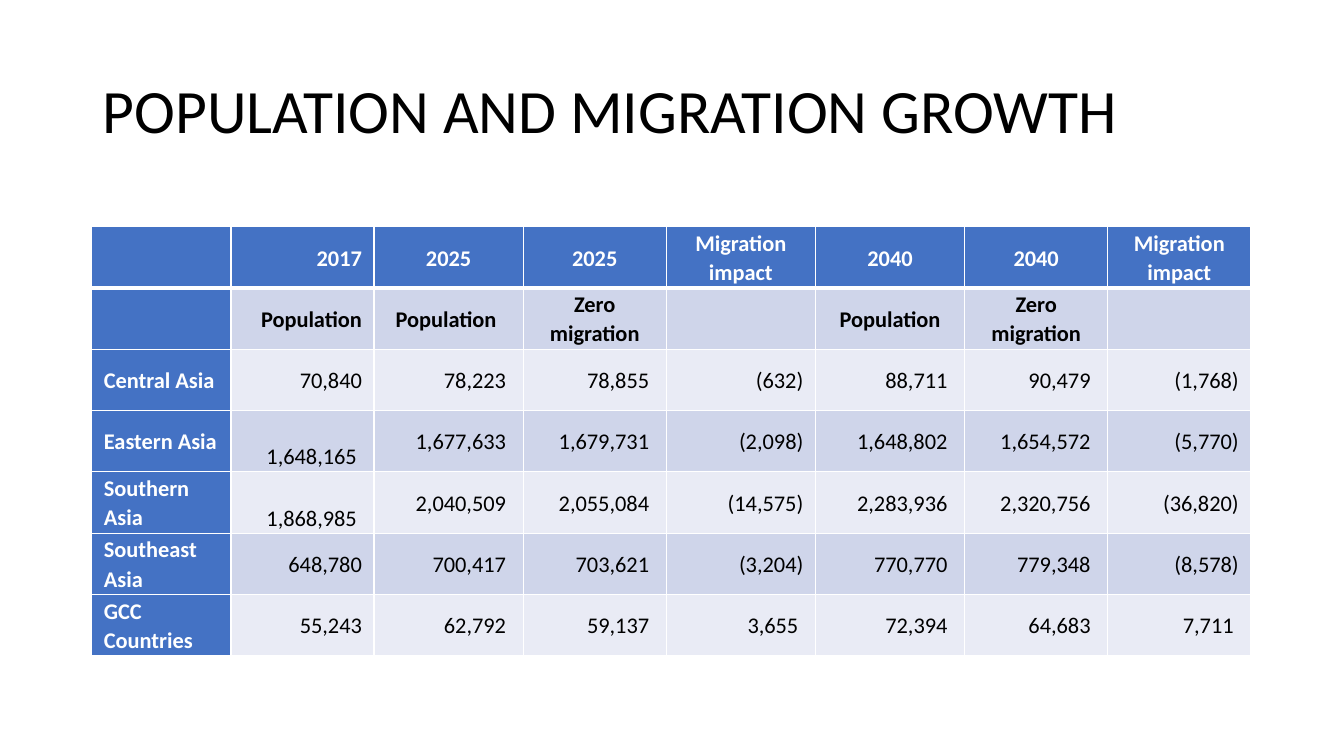
"""Build the population and migration growth slide."""
from dataclasses import dataclass
from typing import Any

from lxml import etree
from pptx import Presentation
from pptx import util as u
from pptx.dml.color import RGBColor
from pptx.enum import text as t
from pptx.oxml import ns

WIDE, HIGH = 13.33, 7.5


@dataclass(frozen=True)
class Theme:
    """Hold the colours, font and type sizes."""
    face: str = "Calibri"
    head: float = 44
    body: float = 16
    ink: str = "000000"
    white: str = "FFFFFF"
    blue: str = "4472C4"
    bands: tuple[str, str] = ("E9EBF5", "CFD5EA")
    thin: float = 1
    thick: float = 3


@dataclass(frozen=True)
class Box:
    """Place an area in percent of the slide."""
    left: float
    top: float
    width: float
    height: float


@dataclass(frozen=True)
class Cell:
    """Describe one table cell."""
    words: str
    fill: str
    ink: str
    bold: bool
    align: Any
    top: float = 0
    right: float = 0.12


LOOK = Theme()
TITLE = Box(6.9, 5.33, 86.25, 19.33)
GRID = Box(6.83, 30, 86.25, 56.77)
SLIM, BROAD = 10.65, 11.1
COLS = (10.35, SLIM, BROAD, SLIM, BROAD, BROAD, SLIM, SLIM)
PAD, SPACE, DROP = 0.12, 0.05, 0.3
ROWS = (
    ("", "2017", "2025", "2025", "Migration impact", "2040", "2040", "Migration impact"),
    ("", "Population", "Population", "Zero migration", "", "Population", "Zero migration", ""),
    ("Central Asia", "70,840", "78,223", "78,855", "(632)", "88,711", "90,479", "(1,768)"),
    ("Eastern Asia", "1,648,165", "1,677,633", "1,679,731", "(2,098)", "1,648,802", "1,654,572", "(5,770)"),
    ("Southern Asia", "1,868,985", "2,040,509", "2,055,084", "(14,575)", "2,283,936", "2,320,756", "(36,820)"),
    ("Southeast Asia", "648,780", "700,417", "703,621", "(3,204)", "770,770", "779,348", "(8,578)"),
    ("GCC Countries", "55,243", "62,792", "59,137", "3,655", "72,394", "64,683", "7,711"),
)


def across(share: float) -> int:
    """Turn a percent of the slide width into a length."""
    return u.Inches(WIDE * share / 100)


def down(share: float) -> int:
    """Turn a percent of the slide height into a length."""
    return u.Inches(HIGH * share / 100)


def place(box: Box) -> tuple[int, int, int, int]:
    """Return the box as slide lengths."""
    return across(box.left), down(box.top), across(box.width), down(box.height)


def apply(item: Any, form: dict[str, Any]) -> None:
    """Set each format value on the item."""
    for name, value in form.items():
        setattr(item, name, value)


def write(para: Any, words: str, size: float, ink: str, bold: bool = False) -> None:
    """Add one styled run to the paragraph."""
    run = para.add_run()
    run.text = words
    apply(run.font, {"name": LOOK.face, "size": u.Pt(size), "bold": bold})
    run.font.color.rgb = RGBColor.from_string(ink)


def plan(row: int, col: int, words: str) -> Cell:
    """Choose the format of a cell from its row and column."""
    side = col == 0
    blue = side or row == 0
    fill = LOOK.blue if blue else LOOK.bands[row % 2]
    ink = LOOK.white if blue else LOOK.ink
    align = t.PP_ALIGN.CENTER if row < 2 and col > 1 else t.PP_ALIGN.RIGHT
    if side:
        align = t.PP_ALIGN.LEFT
    low = col == 1 and row > 1 and len(words) > 7
    plain = row > 1 and col > 1 and not words.endswith(")")
    shift = low or plain or (row, col) == (1, 2)
    return Cell(words, fill, ink, blue or row < 2, align,
                DROP if low else 0, PAD + SPACE if shift else PAD)


def edge(cell: Any, row: int) -> None:
    """Draw the white lines around a cell."""
    props = cell._tc.get_or_add_tcPr()
    heavy = {0: "B", 1: "T"}.get(row)
    for rank, side in enumerate("LRTB"):
        width = LOOK.thick if side == heavy else LOOK.thin
        line = etree.Element(ns.qn(f"a:ln{side}"), w=str(u.Pt(width)))
        fill = etree.SubElement(line, ns.qn("a:solidFill"))
        etree.SubElement(fill, ns.qn("a:srgbClr"), val=LOOK.white)
        props.insert(rank, line)


def paint(cell: Any, spec: Cell, row: int) -> None:
    """Fill, write and outline one cell."""
    apply(cell, {"vertical_anchor": t.MSO_ANCHOR.MIDDLE,
                 "margin_left": u.Inches(PAD), "margin_right": u.Inches(spec.right),
                 "margin_top": u.Inches(spec.top), "margin_bottom": 0})
    cell.fill.solid()
    cell.fill.fore_color.rgb = RGBColor.from_string(spec.fill)
    if spec.words:
        para = cell.text_frame.paragraphs[0]
        apply(para, {"alignment": spec.align, "line_spacing": 1.07})
        write(para, spec.words, LOOK.body, spec.ink, spec.bold)
    edge(cell, row)


def title(slide: Any) -> None:
    """Add the slide title."""
    frame = slide.shapes.add_textbox(*place(TITLE)).text_frame
    apply(frame, {"word_wrap": True, "vertical_anchor": t.MSO_ANCHOR.MIDDLE})
    para = frame.paragraphs[0]
    para.line_spacing = 0.9
    write(para, "POPULATION AND MIGRATION GROWTH", LOOK.head, LOOK.ink)


def table(slide: Any) -> None:
    """Add the population table."""
    grid = slide.shapes.add_table(len(ROWS), len(COLS), *place(GRID)).table
    apply(grid, {"first_col": True})
    for col, share in zip(grid.columns, COLS):
        col.width = across(share)
    for row, line in enumerate(ROWS):
        grid.rows[row].height = down(GRID.height / len(ROWS))
        for col, words in enumerate(line):
            paint(grid.cell(row, col), plan(row, col, words), row)


def main() -> None:
    """Build and save the deck."""
    deck = Presentation()
    apply(deck, {"slide_width": across(100), "slide_height": down(100)})
    slide = deck.slides.add_slide(deck.slide_layouts[6])
    title(slide)
    table(slide)
    deck.save("out.pptx")


if __name__ == "__main__":
    main()
